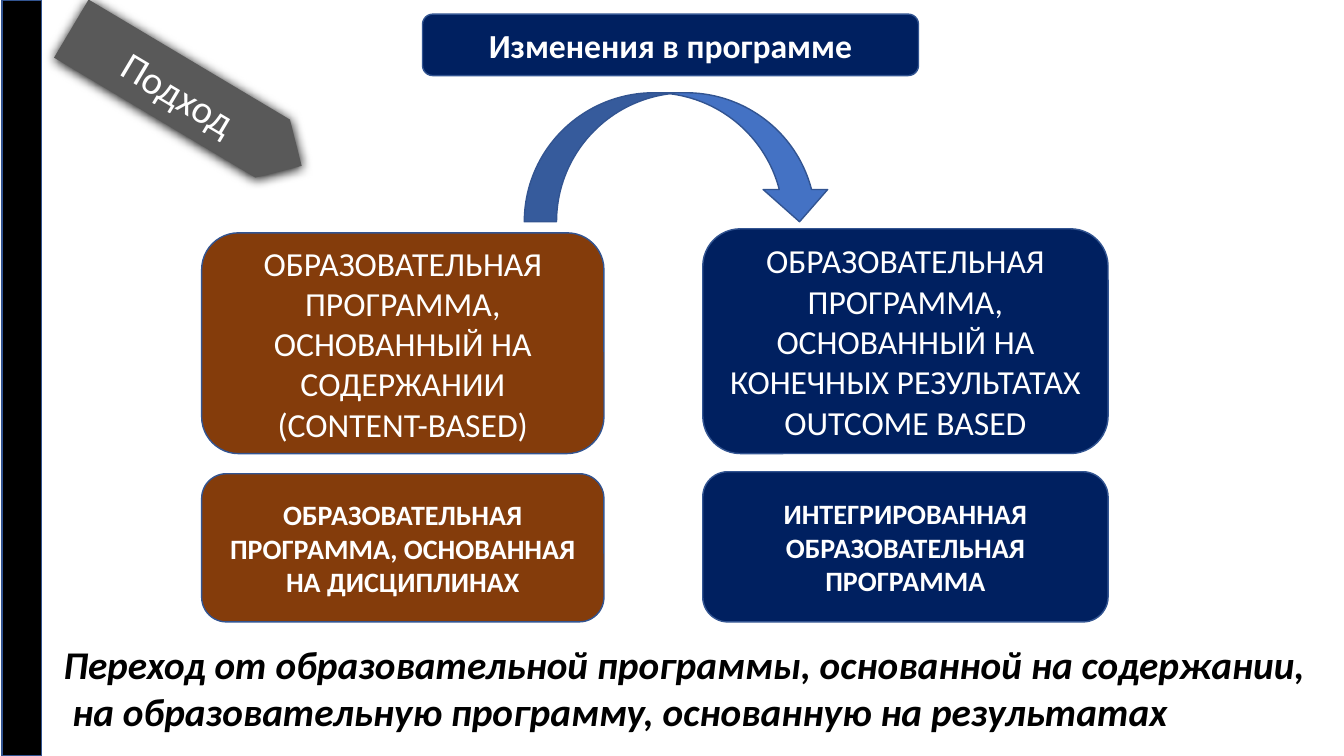
"""Build the slide on moving from content-based to outcome-based programmes."""
from dataclasses import dataclass

from lxml.etree import SubElement
from pptx import Presentation
from pptx.dml.color import RGBColor
from pptx.enum.shapes import MSO_SHAPE
from pptx.enum.text import MSO_ANCHOR, MSO_AUTO_SIZE, PP_ALIGN
from pptx.oxml.ns import qn
from pptx.shapes.autoshape import Shape
from pptx.slide import Slide
from pptx.util import Emu, Pt

EMU_PER_PX = 9144
FONT = "Calibri"
COLORS = {
    "black": "000000",
    "white": "FFFFFF",
    "outline": "325491",
    "brown": "843C0B",
    "navy": "002060",
    "blue": "4472C4",
    "gray": "595959",
}


@dataclass(frozen=True)
class Block:
    kind: MSO_SHAPE
    left: int
    top: int
    width: int
    height: int
    fill: str
    text: str = ""
    size: int = 24
    bold: bool = False
    outlined: bool = True
    rotation: float = 0


ROUNDED = MSO_SHAPE.ROUNDED_RECTANGLE
SIDEBAR = Block(MSO_SHAPE.RECTANGLE, 2, 0, 39, 750, "black")
TITLE = Block(ROUNDED, 419, 14, 492, 61, "navy", "Изменения в программе", bold=True)
TRANSITION = Block(MSO_SHAPE.CURVED_DOWN_ARROW, 520, 92, 305, 128, "blue")
APPROACH = Block(MSO_SHAPE.PENTAGON, 52, 63, 266, 67, "gray", "Подход", 28,
                 outlined=False, rotation=30.8)
PROGRAMMES = [
    Block(ROUNDED, 200, 231, 399, 219, "brown",
          "ОБРАЗОВАТЕЛЬНАЯ ПРОГРАММА, ОСНОВАННЫЙ НА СОДЕРЖАНИИ (CONTENT-BASED)"),
    Block(ROUNDED, 697, 227, 402, 223, "navy",
          "ОБРАЗОВАТЕЛЬНАЯ ПРОГРАММА, ОСНОВАННЫЙ НА КОНЕЧНЫХ РЕЗУЛЬТАТАХ OUTCOME BASED"),
    Block(ROUNDED, 200, 470, 399, 147, "brown",
          "ОБРАЗОВАТЕЛЬНАЯ ПРОГРАММА, ОСНОВАННАЯ НА ДИСЦИПЛИНАХ", 20, True),
    Block(ROUNDED, 697, 468, 402, 149, "navy",
          "ИНТЕГРИРОВАННАЯ ОБРАЗОВАТЕЛЬНАЯ ПРОГРАММА", 20, True),
]
SUMMARY = (
    "Переход от образовательной программы, основанной на содержании,\n"
    " на образовательную программу, основанную на результатах"
)


def px(length: int) -> Emu:
    """Turn px into EMU."""
    return Emu(length * EMU_PER_PX)


def color(key: str) -> RGBColor:
    """Look up a named colour."""
    return RGBColor.from_string(COLORS[key])


def style_text(shape: Shape, size: int, ink: str, align: PP_ALIGN,
               bold: bool, italic: bool = False) -> None:
    """Format every paragraph and run of a shape."""
    for paragraph in shape.text_frame.paragraphs:
        paragraph.alignment = align
        for run in paragraph.runs:
            run.font.name = FONT
            run.font.size = Pt(size)
            run.font.bold = bold
            run.font.italic = italic
            run.font.color.rgb = color(ink)


def draw_block(slide: Slide, block: Block) -> Shape:
    """Draw a filled shape with its centred text."""
    shape = slide.shapes.add_shape(
        block.kind, px(block.left), px(block.top), px(block.width), px(block.height))
    shape.rotation = block.rotation
    shape.fill.solid()
    shape.fill.fore_color.rgb = color(block.fill)
    if block.outlined:
        shape.line.color.rgb = color("outline")
        shape.line.width = Pt(1)
    else:
        shape.line.fill.background()
    shape.shadow.inherit = False
    if block.text:
        shape.text_frame.text = block.text
        shape.text_frame.word_wrap = True
        shape.text_frame.vertical_anchor = MSO_ANCHOR.MIDDLE
        style_text(shape, block.size, "white", PP_ALIGN.CENTER, block.bold)
    return shape


def add_soft_shadow(shape: Shape) -> None:
    """Give a shape a blurred black shadow just below it."""
    effects = shape.element.spPr.find(qn("a:effectLst"))
    shadow = SubElement(effects, qn("a:outerShdw"), blurRad=str(Pt(8.5)),
                        dist=str(Pt(1)), dir="5400000", algn="ctr", rotWithShape="0")
    SubElement(shadow, qn("a:srgbClr"), val=COLORS["black"])


def draw_summary(slide: Slide) -> None:
    """Write the closing statement along the bottom."""
    summary = slide.shapes.add_textbox(px(53), px(630), px(1359), px(104))
    summary.text_frame.text = SUMMARY
    summary.text_frame.word_wrap = True
    summary.text_frame.auto_size = MSO_AUTO_SIZE.SHAPE_TO_FIT_TEXT
    style_text(summary, 28, "black", PP_ALIGN.LEFT, bold=True, italic=True)


def main() -> None:
    """Build and save the presentation."""
    presentation = Presentation()
    presentation.slide_width = px(1333)
    presentation.slide_height = px(750)
    slide = presentation.slides.add_slide(presentation.slide_layouts[6])
    for block in (SIDEBAR, TRANSITION, *PROGRAMMES, TITLE):
        draw_block(slide, block)
    add_soft_shadow(draw_block(slide, APPROACH))
    draw_summary(slide)
    presentation.save("out.pptx")


if __name__ == "__main__":
    main()
